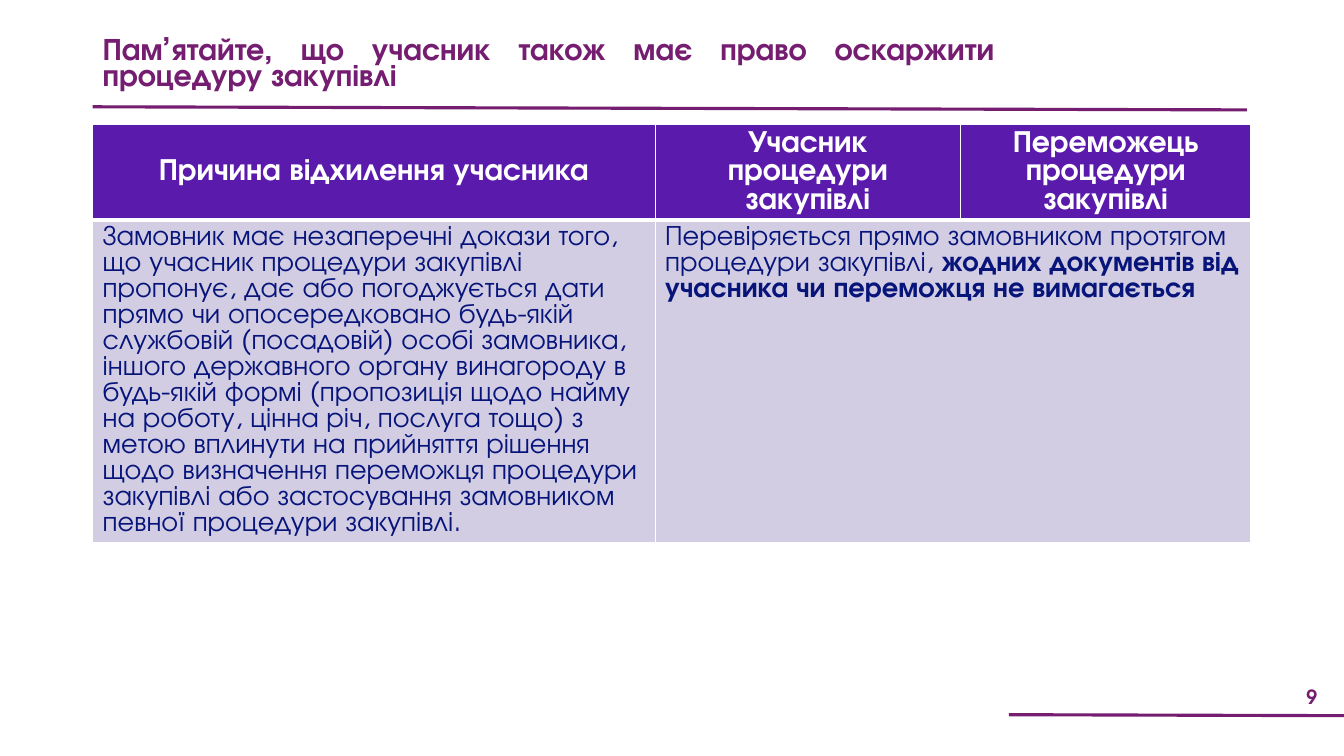
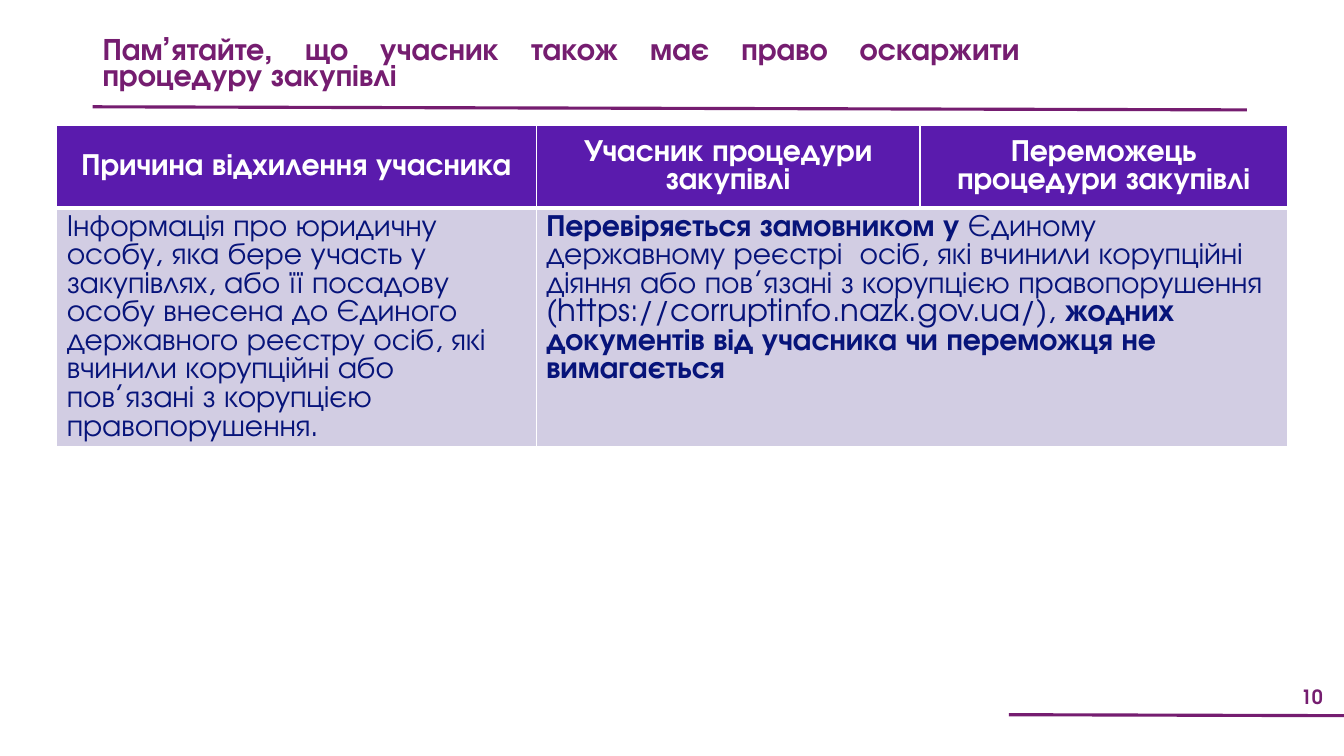
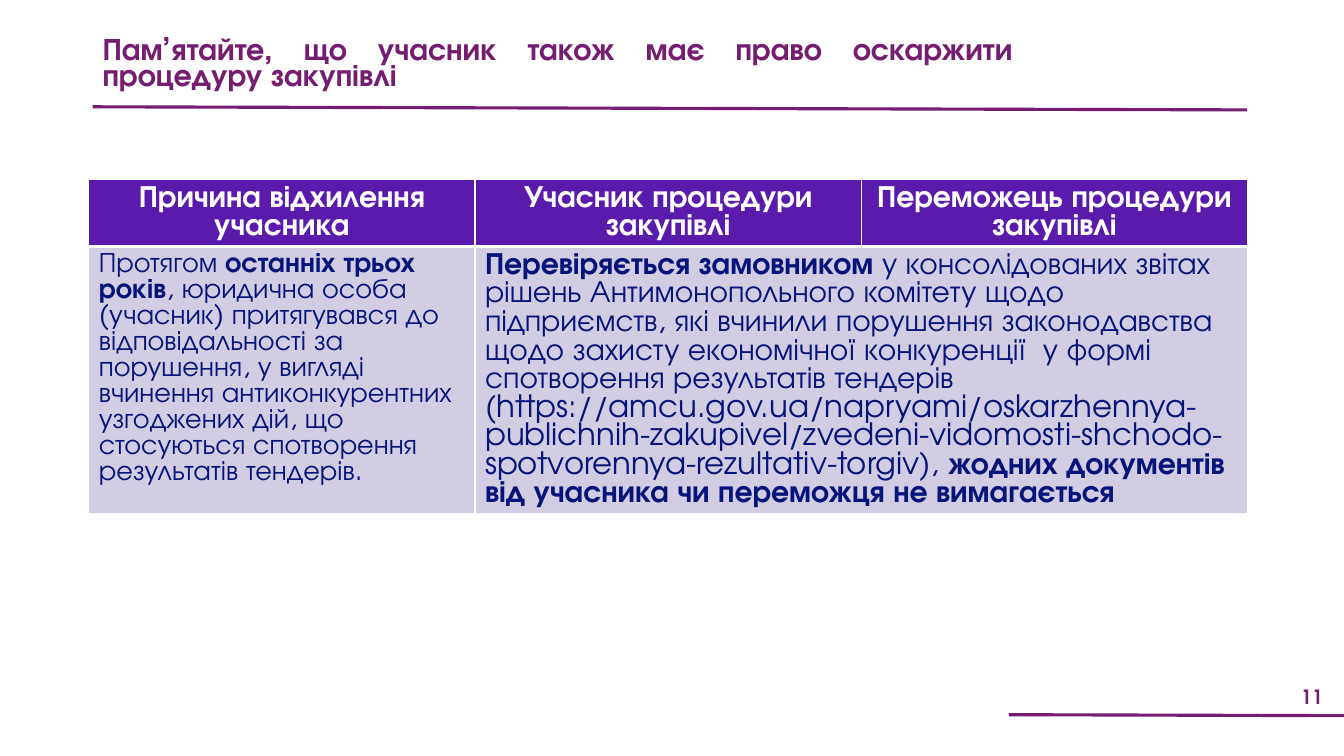
from lxml import etree
from pptx import Presentation
from pptx.dml.color import RGBColor
from pptx.enum.shapes import MSO_CONNECTOR
from pptx.enum.text import MSO_ANCHOR, PP_ALIGN
from pptx.oxml.ns import qn
from pptx.util import Pt

LINE = MSO_CONNECTOR.STRAIGHT
MID, TOP = MSO_ANCHOR.MIDDLE, MSO_ANCHOR.TOP
LEFT, MIDDLE, JUST = PP_ALIGN.LEFT, PP_ALIGN.CENTER, PP_ALIGN.JUSTIFY

FONT = "TeX Gyre Adventor"
PLUM, VIOLET, LILAC, NAVY, WHITE = "751D70", "5A1BAD", "D2CDE3", "07147A", "FFFFFF"
TITLE = "Пам’ятайте, що учасник також має право оскаржити процедуру закупівлі"
HEADS = ["Причина відхилення учасника", "Учасник процедури закупівлі",
         "Переможець процедури закупівлі"]
NO_DOCS = ("жодних документів від учасника чи переможця не вимагається", True)


def color(code):
    return RGBColor.from_string(code)


def write(frame, runs, size, code, align=LEFT, bold=None):
    """Fill a frame with one paragraph of (text, bold) runs."""
    para = frame.paragraphs[0]
    para.alignment = align
    font = para.font
    font.name, font.size, font.bold = FONT, Pt(size), bold
    font.color.rgb = color(code)
    for text, strong in runs:
        run = para.add_run()
        run.text = text
        # Runs carry the font too, since the table style would win otherwise
        run.font.name, run.font.size, run.font.bold = FONT, Pt(size), strong
        run.font.color.rgb = color(code)
    return para


def add_text(slide, box, text, size, align, anchor):
    frame = slide.shapes.add_textbox(*map(Pt, box)).text_frame
    frame.word_wrap = True
    frame.vertical_anchor = anchor
    return write(frame, [(text, True)], size, PLUM, align, True)


def add_rule(slide, *ends):
    rule = slide.shapes.add_connector(LINE, *map(Pt, ends))
    rule.line.color.rgb = color(PLUM)
    rule.line.width = Pt(2.25)
    etree.SubElement(rule._element.spPr, qn("a:effectLst"))


def add_frame(slide, number, width):
    """Title, the rule below it, and the footer."""
    title = add_text(slide, (66.2, 24.5, width, 46.8), TITLE, 22.2, JUST, TOP)
    title.line_spacing = 0.7
    add_rule(slide, 66.2, 76.3, 890.6, 78.5)
    add_text(slide, (914.4, 484.6, 45.4, 25.9), str(number), 14, MIDDLE, MID)
    add_rule(slide, 720.7, 510.5, 961.2, 511.2)


def style_cell(cell, fill, base):
    """White borders, then the fill; base is the width of the lower border."""
    props = cell._tc.get_or_add_tcPr()
    for side, width in zip("LRTB", (1, 1, 1, base)):
        edge = etree.SubElement(props, qn("a:ln" + side), w=str(Pt(width)))
        paint = etree.SubElement(edge, qn("a:solidFill"))
        etree.SubElement(paint, qn("a:srgbClr"), val=WHITE)
    cell.fill.solid()
    cell.fill.fore_color.rgb = color(fill)


def add_grid(slide, left, top, cols, rows, cause, check, size):
    """Header row, then the cause and a check that spans two columns."""
    box = map(Pt, (left, top, sum(cols), sum(rows)))
    table = slide.shapes.add_table(2, 3, *box).table
    table.horz_banding = False
    for col, width in zip(table.columns, cols):
        col.width = Pt(width)
    for row, height in zip(table.rows, rows):
        row.height = Pt(height)
    for i, head in enumerate(HEADS):
        cell = table.cell(0, i)
        style_cell(cell, VIOLET, 3)
        style_cell(table.cell(1, i), LILAC, 1)
        cell.vertical_anchor = MID
        write(cell.text_frame, [(head, True)], 22, WHITE, MIDDLE, True)
    table.cell(1, 1).merge(table.cell(1, 2))
    for i, (runs, points) in enumerate([(cause, size[0]), (check, size[1])]):
        write(table.cell(1, i).text_frame, runs, points, NAVY)


# Title width, then the table: left, top, columns, rows, cause, check, sizes
SLIDES = [
    (651.6, (66.2, 88.9, (401.8, 218.2, 207.4), (67, 230), [
        ("Замовник має незаперечні докази того, що учасник процедури закупівлі "
         "пропонує, дає або погоджується дати прямо чи опосередковано будь-якій "
         "службовій (посадовій) особі замовника, іншого державного органу "
         "винагороду в будь-якій формі (пропозиція щодо найму на роботу, цінна "
         "річ, послуга тощо) з метою вплинути на прийняття рішення щодо "
         "визначення переможця процедури закупівлі або застосування замовником "
         "певної процедури закупівлі.", False),
    ], [
        ("Перевіряється прямо замовником протягом процедури закупівлі, ", False),
        NO_DOCS,
    ], (20, 20))),
    (669.6, (40.5, 89.8, (342.5, 274.2, 262.5), (59, 169), [
        ("Інформація про юридичну особу, яка бере участь у закупівлях, або її "
         "посадову особу внесена до Єдиного державного реєстру осіб, які вчинили "
         "корупційні або пов’язані з корупцією правопорушення.", False),
    ], [
        ("Перевіряється замовником у ", True),
        ("Єдиному державному реєстрі  осіб, які вчинили корупційні діяння або "
         "пов’язані з корупцією правопорушення "
         "(https://corruptinfo.nazk.gov.ua/), ", False),
        NO_DOCS,
    ], (22, 22))),
    (664.6, (63.4, 128.3, (275.9,) * 3, (47, 191), [
        ("Протягом ", False),
        ("останніх трьох років", True),
        (", юридична особа (учасник) притягувався до відповідальності за "
         "порушення, у вигляді вчинення антиконкурентних узгоджених дій, що "
         "стосуються спотворення результатів тендерів.", False),
    ], [
        ("Перевіряється замовником ", True),
        ("у консолідованих звітах рішень Антимонопольного комітету щодо "
         "підприємств, які вчинили порушення законодавства щодо захисту "
         "економічної конкуренції  у формі спотворення результатів тендерів "
         "(https://amcu.gov.ua/napryami/oskarzhennya-publichnih-zakupivel/"
         "zvedeni-vidomosti-shchodo-spotvorennya-rezultativ-torgiv), ", False),
        NO_DOCS,
    ], (20, 22))),
]


def main():
    deck = Presentation()
    deck.slide_width, deck.slide_height = Pt(960), Pt(540)
    for number, (width, grid) in enumerate(SLIDES, 9):
        slide = deck.slides.add_slide(deck.slide_layouts[6])
        add_grid(slide, *grid)
        add_frame(slide, number, width)
    deck.save("out.pptx")


if __name__ == "__main__":
    main()
